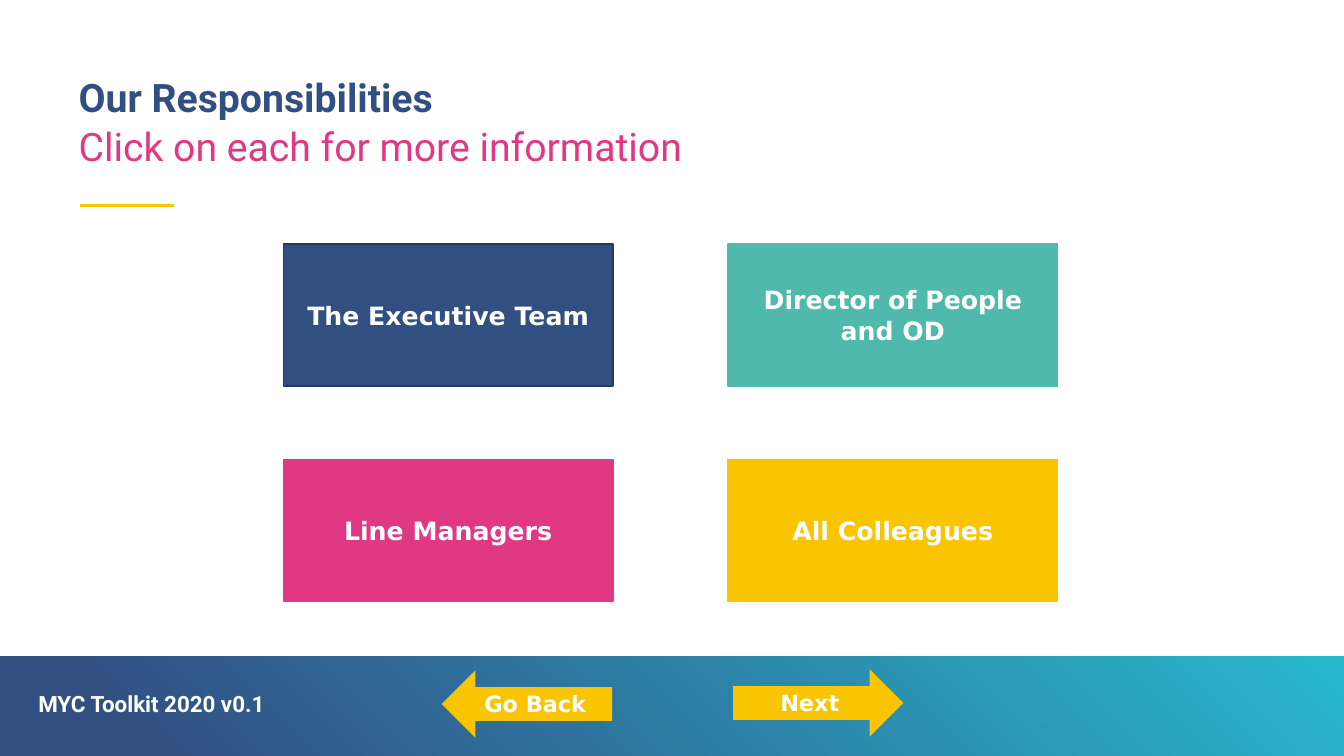
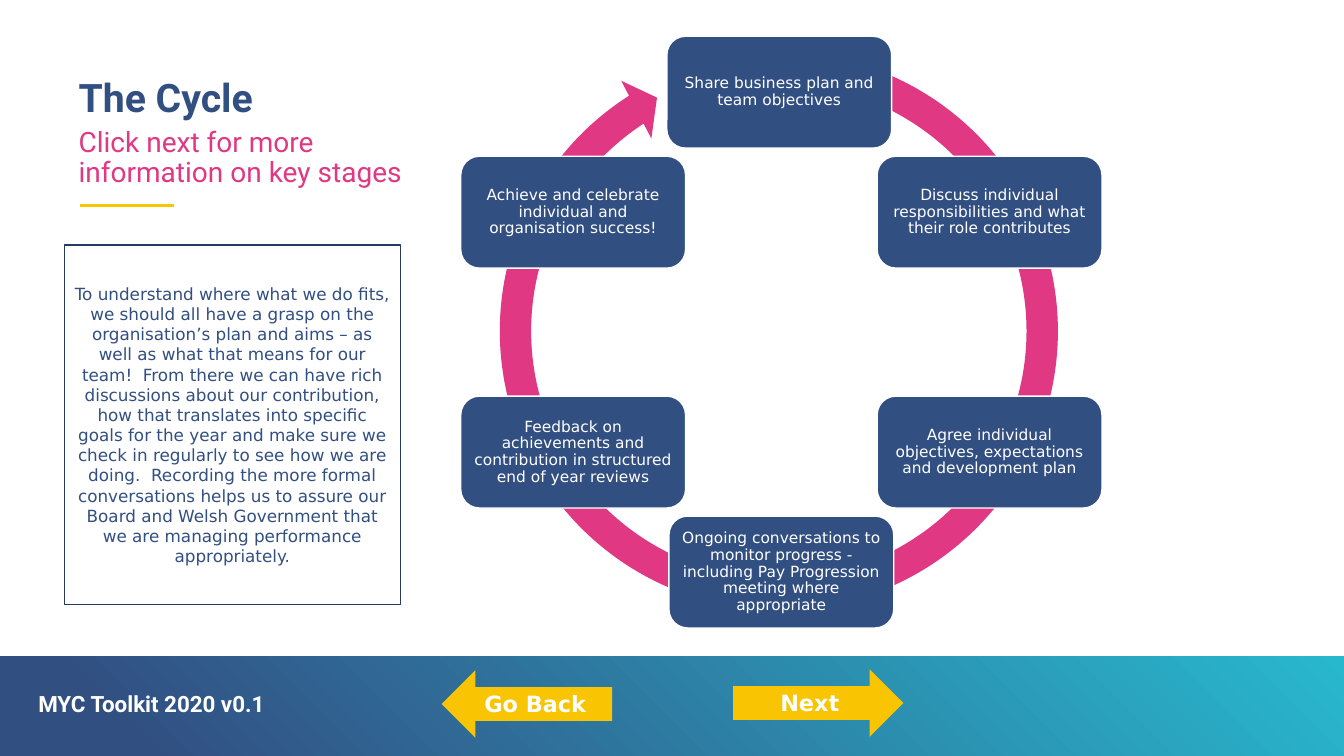
"""Build the responsibilities and cycle slides of the toolkit."""
from dataclasses import dataclass
from pptx import Presentation
from pptx.dml.color import RGBColor
from pptx.enum.shapes import MSO_CONNECTOR, MSO_SHAPE
from pptx.enum.text import MSO_ANCHOR, MSO_AUTO_SIZE, PP_ALIGN
from pptx.oxml.ns import qn
from pptx.util import Inches, Pt
from lxml.etree import SubElement


@dataclass(frozen=True)
class Theme:
    navy: str = "324F82"
    edge: str = "253A60"
    pink: str = "E03882"
    teal: str = "4FB9AB"
    gold: str = "F9C402"
    cyan: str = "28B8CE"
    white: str = "FFFFFF"
    head: str = "Roboto"
    body: str = "DejaVu Sans"
    title: int = 28
    lead: int = 20
    card: int = 18
    nav: int = 16
    note: int = 12
    node: int = 11


T = Theme()
WIDE, HIGH = 13.33, 7.5
LEFT, TOP = 0.78, 0.78
FOOT = "MYC Toolkit 2020 v0.1"

NAV = [
    ("Go Back", MSO_SHAPE.LEFT_ARROW, 4.38, 6.65),
    ("Next", MSO_SHAPE.RIGHT_ARROW, 7.27, 6.64),
]
CARDS = [
    [("The Executive Team", T.navy, T.edge), ("Director of People and OD", T.teal, T.teal)],
    [("Line Managers", T.pink, T.pink), ("All Colleagues", T.gold, T.gold)],
]
NODES = [
    ("Share business plan and team objectives", 0.99, 0),
    ("Discuss individual responsibilities and what their role contributes", 2, 1),
    ("Agree individual objectives, expectations and development plan", 2, 3),
    ("Ongoing conversations to monitor progress - including Pay Progression meeting where appropriate", 1, 4),
    ("Feedback on achievements and contribution in structured end of year reviews", 0, 3),
    ("Achieve and celebrate individual and organisation success!", 0, 1),
]
RING = (0.053, 3.126, 142.341, 171.236, 0.055)
NOTE = (
    "To understand where what we do fits, we should all have a grasp on the "
    "organisation’s plan and aims – as well as what that means for our team!  "
    "From there we can have rich discussions about our contribution, how that "
    "translates into specific goals for the year and make sure we check in "
    "regularly to see how we are doing.  Recording the more formal conversations "
    "helps us to assure our Board and Welsh Government that we are managing "
    "performance appropriately."
)


def rgb(tone):
    return RGBColor.from_string(tone)


def apply(item, **vals):
    for key, val in vals.items():
        setattr(item, key, val)


def write(shape, text, size, tone, face=T.body, bold=False, pad=None,
          align=PP_ALIGN.CENTER, anchor=MSO_ANCHOR.MIDDLE, lead=None):
    frame = shape.text_frame
    apply(frame, text=text, word_wrap=True, auto_size=MSO_AUTO_SIZE.NONE,
          vertical_anchor=anchor)
    if pad is not None:
        for side in ("left", "right", "top", "bottom"):
            setattr(frame, f"margin_{side}", Inches(pad))
    para = frame.paragraphs[0]
    apply(para, alignment=align, line_spacing=lead, space_before=Pt(0))
    font = para.runs[0].font
    apply(font, size=Pt(size), name=face, bold=bold)
    font.color.rgb = rgb(tone)


def label(shape, text, size, tone, bold=False):
    write(shape, text, size, tone, T.head, bold, 0, PP_ALIGN.LEFT, MSO_ANCHOR.TOP, 0.9)


def block(shapes, kind, box, fill=None, edge=None):
    shape = shapes.add_shape(kind, *map(Inches, box))
    shape.shadow.inherit = False
    if fill:
        shape.fill.solid()
        shape.fill.fore_color.rgb = rgb(fill)
    else:
        shape.fill.background()
    if edge:
        shape.line.color.rgb = rgb(edge)
        shape.line.width = Pt(1)
    else:
        shape.line.fill.background()
    return shape


def dress(layout, slide):
    top = 6.51
    band = block(slide.shapes, MSO_SHAPE.RECTANGLE, (0, top, WIDE, HIGH - top))
    band.fill.gradient()
    band.fill.gradient_angle = 45
    for stop, tone, spot in zip(band.fill.gradient_stops, (T.navy, T.cyan), (0.1, 1)):
        stop.color.rgb = rgb(tone)
        stop.position = spot
    rule = slide.shapes.add_connector(
        MSO_CONNECTOR.STRAIGHT, *map(Inches, (0.79, 2.04, 1.73, 2.04)))
    rule.line.color.rgb = rgb(T.gold)
    rule.line.width = Pt(2.25)
    SubElement(rule.element.spPr, qn("a:effectLst"))
    for num, part in enumerate((band, rule), 90):
        part.element.xpath(".//p:cNvPr")[0].set("id", str(num))
        layout.shapes.element.append(part.element)


def start(slide, title, lead, size, width):
    head = slide.shapes.title
    apply(head, left=Inches(LEFT), top=Inches(TOP), width=Inches(11.77), height=Inches(0.43))
    label(head, title, T.title, T.navy, True)
    sub = slide.shapes.add_textbox(*map(Inches, (LEFT, 1.27, width, 0.43)))
    label(sub, lead, size, T.pink)
    foot = slide.shapes.add_textbox(*map(Inches, (0.38, 6.88, 3.6, 0.24)))
    label(foot, FOOT, T.nav, T.white, True)
    for text, kind, x, y in NAV:
        arrow = block(slide.shapes, kind, (x, y, 1.69, 0.67), T.gold)
        write(arrow, text, T.nav, T.white, bold=True)


def duties(slide):
    start(slide, "Our Responsibilities", "Click on each for more information", T.title, 11.77)
    for row, line in enumerate(CARDS):
        for col, (text, fill, edge) in enumerate(line):
            box = (2.81 + 4.41 * col, 2.42 + 2.14 * row, 3.27, 1.41)
            card = block(slide.shapes, MSO_SHAPE.RECTANGLE, box, fill, edge)
            write(card, text, T.card, T.white, bold=True)


def cycle(slide):
    start(slide, "The Cycle", "Click next for more information on key stages", T.lead, 3.59)
    group = slide.shapes.add_group_shape().shapes
    ring = block(group, MSO_SHAPE.CIRCULAR_ARROW, (4.79, 0.35, 5.87, 5.87), T.pink)
    for num, val in enumerate(RING):
        ring.adjustments[num] = val
    for text, col, row in NODES:
        box = (4.57 + 2.065 * col, 0.36 + 1.19 * row, 2.23, 1.11)
        node = block(group, MSO_SHAPE.ROUNDED_RECTANGLE, box, T.navy, T.white)
        write(node, text, T.node, T.white, pad=0.05, lead=0.9)
    note = block(slide.shapes, MSO_SHAPE.RECTANGLE, (0.64, 2.43, 3.33, 3.57), edge=T.edge)
    write(note, NOTE, T.note, T.navy)


def main():
    deck = Presentation()
    apply(deck, slide_width=Inches(WIDE), slide_height=Inches(HIGH))
    layout = deck.slide_layouts[5]
    for num, draw in enumerate((duties, cycle)):
        slide = deck.slides.add_slide(layout)
        if num == 0:
            dress(layout, slide)
        draw(slide)
    deck.save("out.pptx")


if __name__ == "__main__":
    main()
